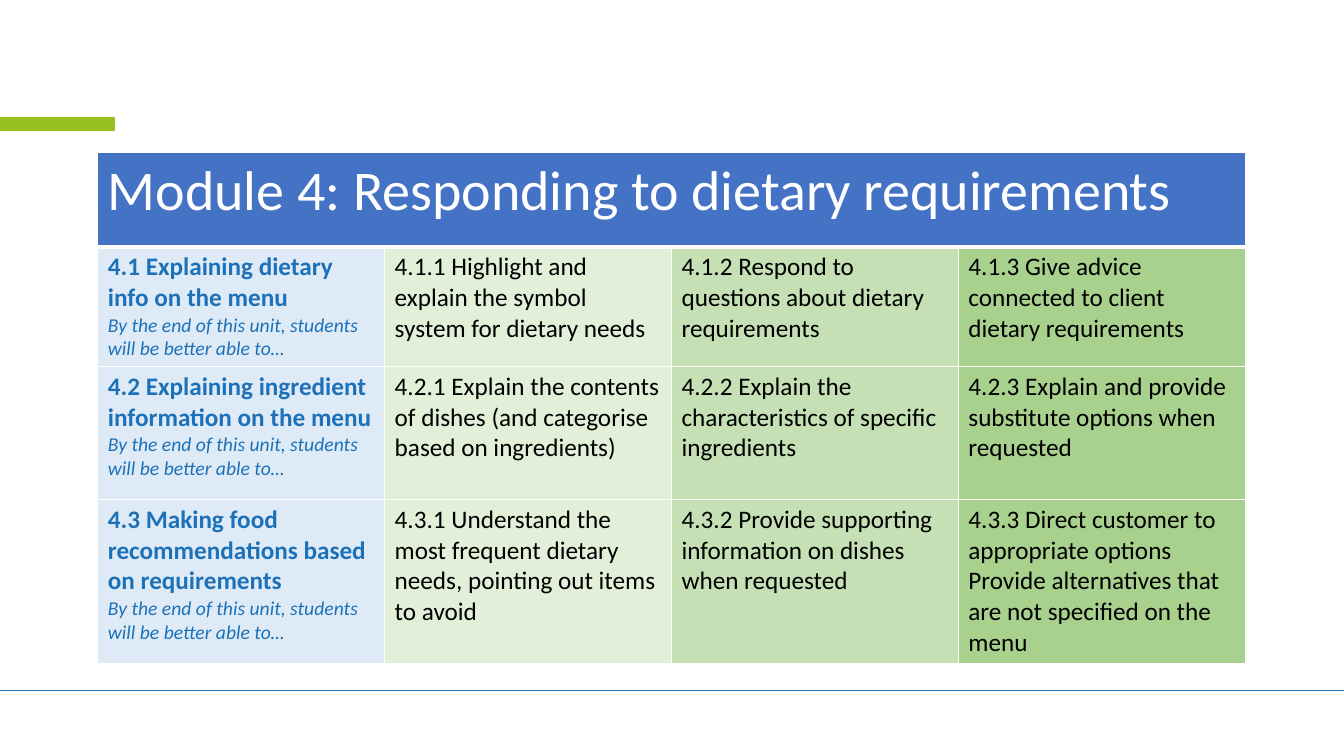
from pptx import Presentation
from pptx.dml.color import RGBColor
from pptx.enum.shapes import MSO_CONNECTOR, MSO_SHAPE
from pptx.oxml import parse_xml
from pptx.oxml.ns import nsdecls
from pptx.util import Inches, Pt
from lxml.etree import SubElement

BLUE, GREEN, WHITE = "1D71B8", "95C11F", "FFFFFF"
FILLS = ["DEEBF7", "E2F0D9", "C5E0B4", "A9D18E"]
HEIGHTS = [0.94, 1.18, 1.32, 1.62]
TITLE = "Module 4: Responding to dietary requirements"
AIM = "By the end of this unit, students will be better able to…"
UNITS = [
    ["4.1 Explaining dietary info on the menu",
     "4.1.1 Highlight and explain the symbol system for dietary needs",
     "4.1.2 Respond to questions about dietary requirements",
     "4.1.3 Give advice connected to client dietary requirements"],
    ["4.2 Explaining ingredient information on the menu",
     "4.2.1 Explain the contents of dishes (and categorise based on ingredients)",
     "4.2.2 Explain the characteristics of specific ingredients",
     "4.2.3 Explain and provide substitute options when requested"],
    ["4.3 Making food recommendations based on requirements",
     "4.3.1 Understand the most frequent dietary needs, pointing out items to avoid",
     "4.3.2 Provide supporting information on dishes when requested",
     "4.3.3 Direct customer to appropriate options\n"
     "Provide alternatives that are not specified on the menu"],
]


def rgb(code):
    return RGBColor.from_string(code)


def style(cell, fill, size, color, base=1):
    """Set a cell's white borders (base is the bottom width), fill and font."""
    props = cell._tc.get_or_add_tcPr()
    for side, width in zip("LRTB", (1, 1, 1, base)):
        props.append(parse_xml(
            f'<a:ln{side} {nsdecls("a")} w="{Pt(width)}"><a:solidFill>'
            f'<a:srgbClr val="{WHITE}"/></a:solidFill></a:ln{side}>'))
    cell.fill.solid()
    cell.fill.fore_color.rgb = rgb(fill)
    for para in cell.text_frame.paragraphs:
        para.font.name = "Calibri"
        para.font.size = Pt(size)
        para.font.bold = False
        para.font.color.rgb = rgb(color)


deck = Presentation()
deck.slide_width, deck.slide_height = Inches(13.33), Inches(7.5)
slide = deck.slides.add_slide(deck.slide_layouts[6])
shapes = slide.shapes

# Footer rule and accent bar
rule = shapes.add_connector(MSO_CONNECTOR.STRAIGHT, 0, Inches(6.85),
                            Inches(13.33), Inches(6.85))
rule.line.color.rgb = rgb(BLUE)
rule.line.width = Pt(1)
SubElement(rule._element.spPr,
           "{http://schemas.openxmlformats.org/drawingml/2006/main}effectLst")

bar = shapes.add_shape(MSO_SHAPE.RECTANGLE, 0, Inches(1.17),
                       Inches(1.13), Inches(0.12))
bar.shadow.inherit = False
bar.fill.solid()
bar.fill.fore_color.rgb = rgb(GREEN)
bar.line.color.rgb = rgb(GREEN)
bar.line.width = Pt(1)

# Module table
table = shapes.add_table(4, 4, Inches(0.97), Inches(1.51), Inches(11.38),
                         Inches(sum(HEIGHTS))).table
for row, height in zip(table.rows, HEIGHTS):
    row.height = Inches(height)

table.cell(0, 0).merge(table.cell(0, 3))
table.cell(0, 0).text = TITLE
for cell in table.rows[0].cells:
    style(cell, "4472C4", 40, WHITE, 3)

for r, unit in enumerate(UNITS, 1):
    for c, (text, fill) in enumerate(zip(unit, FILLS)):
        cell = table.cell(r, c)
        cell.text = text if c else f"{text}\n{AIM}"
        style(cell, fill, 18, "000000" if c else BLUE)
    head, aim = table.cell(r, 0).text_frame.paragraphs
    head.font.bold = True
    aim.font.size = Pt(14)
    aim.font.italic = True

deck.save("out.pptx")
